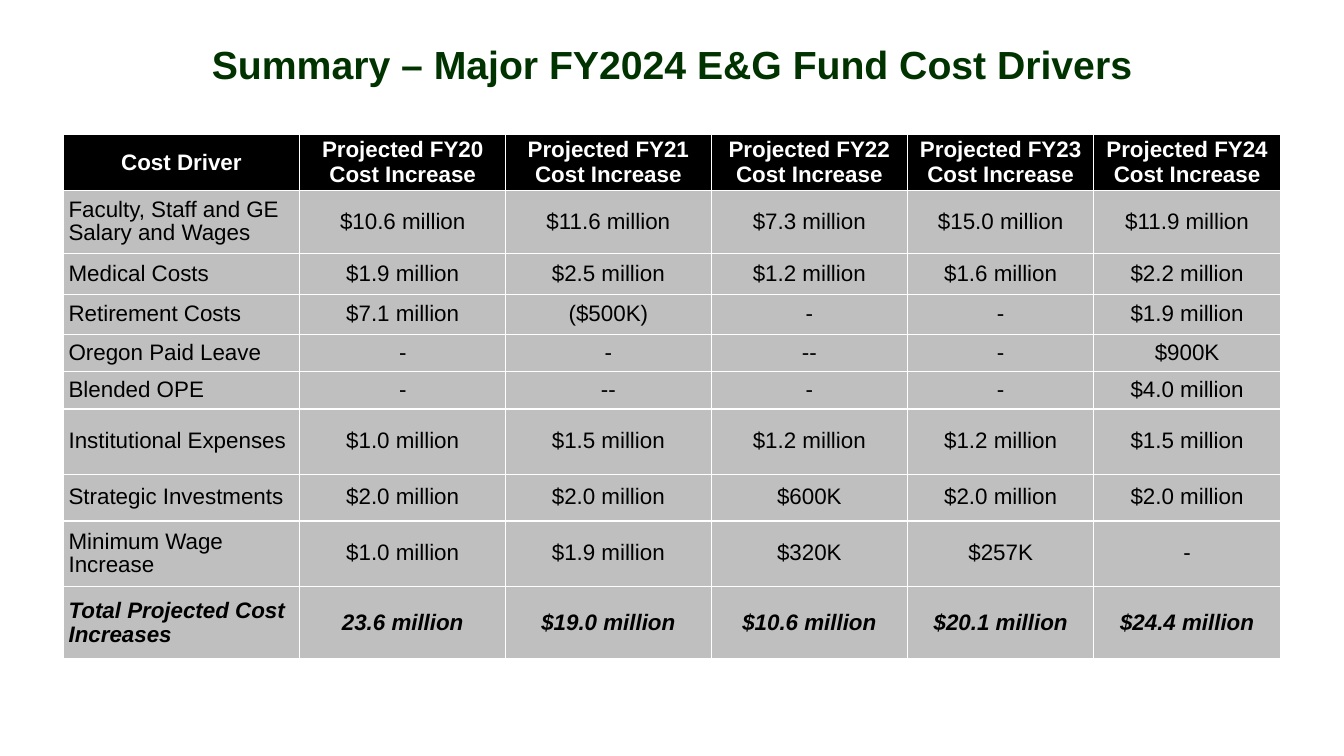
from pptx import Presentation
from pptx.dml.color import RGBColor
from pptx.enum import text as t
from pptx.util import Pt

GREEN = RGBColor(0x00, 0x33, 0x00)
BLACK = RGBColor(0x00, 0x00, 0x00)
WHITE = RGBColor(0xFF, 0xFF, 0xFF)
GRAY = RGBColor(0xBF, 0xBF, 0xBF)

YEARS = ["FY20", "FY21", "FY22", "FY23", "FY24"]
COSTS = [
    ["Faculty, Staff and GE Salary and Wages", "$10.6 million", "$11.6 million",
     "$7.3 million", "$15.0 million", "$11.9 million"],
    ["Medical Costs", "$1.9 million", "$2.5 million", "$1.2 million",
     "$1.6 million", "$2.2 million"],
    ["Retirement Costs", "$7.1 million", "($500K)", "-", "-", "$1.9 million"],
    ["Oregon Paid Leave", "-", "-", "--", "-", "$900K"],
    ["Blended OPE", "-", "--", "-", "-", "$4.0 million"],
    ["Institutional Expenses", "$1.0 million", "$1.5 million", "$1.2 million",
     "$1.2 million", "$1.5 million"],
    ["Strategic Investments", "$2.0 million", "$2.0 million", "$600K",
     "$2.0 million", "$2.0 million"],
    ["Minimum Wage Increase", "$1.0 million", "$1.9 million", "$320K", "$257K", "-"],
    ["Total Projected Cost Increases", "23.6 million", "$19.0 million",
     "$10.6 million", "$20.1 million", "$24.4 million"],
]
WIDTHS = [169.2, 146.9, 146.9, 140.2, 133.2, 133.2]
HEIGHTS = [40, 45.2, 29, 28.8, 26.6, 26.6, 46.8, 33.2, 46.8, 51.8]


def write(frame, words, size=16, color=BLACK, bold=False, italic=False,
          align=t.PP_ALIGN.CENTER, space=1.0):
    """Put one formatted paragraph into a text frame."""
    frame.word_wrap = True
    para = frame.paragraphs[0]
    para.alignment = align
    para.line_spacing = space
    run = para.add_run()
    run.text = words
    font = run.font
    font.name, font.size = "Arial", Pt(size)
    font.bold, font.italic = bold, italic
    font.color.rgb = color


def add_title(slide, left, top, width, height):
    """Place the slide title in the given box."""
    title = slide.shapes.title
    title.left, title.top = Pt(left), Pt(top)
    title.width, title.height = Pt(width), Pt(height)
    title.text_frame.vertical_anchor = t.MSO_ANCHOR.MIDDLE
    write(title.text_frame, "Summary – Major FY2024 E&G Fund Cost Drivers",
          size=28, color=GREEN, bold=True)


def fill_cell(cell, words, fill, **style):
    """Format one table cell and write its text."""
    cell.fill.solid()
    cell.fill.fore_color.rgb = fill
    cell.vertical_anchor = t.MSO_ANCHOR.MIDDLE
    cell.margin_left = cell.margin_right = Pt(4)
    cell.margin_top = cell.margin_bottom = Pt(1.5)
    write(cell.text_frame, words, **style)


def add_costs(slide, left, top, width, height):
    """Place the cost driver table in the given box."""
    head = ["Cost Driver"] + [f"Projected {year} Cost Increase" for year in YEARS]
    rows = [head] + COSTS
    table = slide.shapes.add_table(len(rows), len(head), Pt(left), Pt(top),
                                   Pt(width), Pt(height)).table
    table.horz_banding = False
    for col, size in zip(table.columns, WIDTHS):
        col.width = Pt(size * width / sum(WIDTHS))
    for row, size in zip(table.rows, HEIGHTS):
        row.height = Pt(size * height / sum(HEIGHTS))
    for i, row in enumerate(rows):
        first, last = i == 0, i == len(rows) - 1
        for j, words in enumerate(row):
            fill_cell(table.cell(i, j), words, BLACK if first else GRAY,
                      color=WHITE if first else BLACK,
                      bold=first or last, italic=last,
                      align=t.PP_ALIGN.LEFT if j == 0 and not first
                      else t.PP_ALIGN.CENTER,
                      space=1.0 if first or last else 0.95)


def main():
    """Build and save the slide."""
    deck = Presentation()
    deck.slide_width, deck.slide_height = Pt(960), Pt(540)
    slide = deck.slides.add_slide(deck.slide_layouts[5])
    add_title(slide, 120, 12.5, 720, 65.5)
    add_costs(slide, 45, 96, sum(WIDTHS), sum(HEIGHTS))
    deck.save("out.pptx")


if __name__ == "__main__":
    main()
